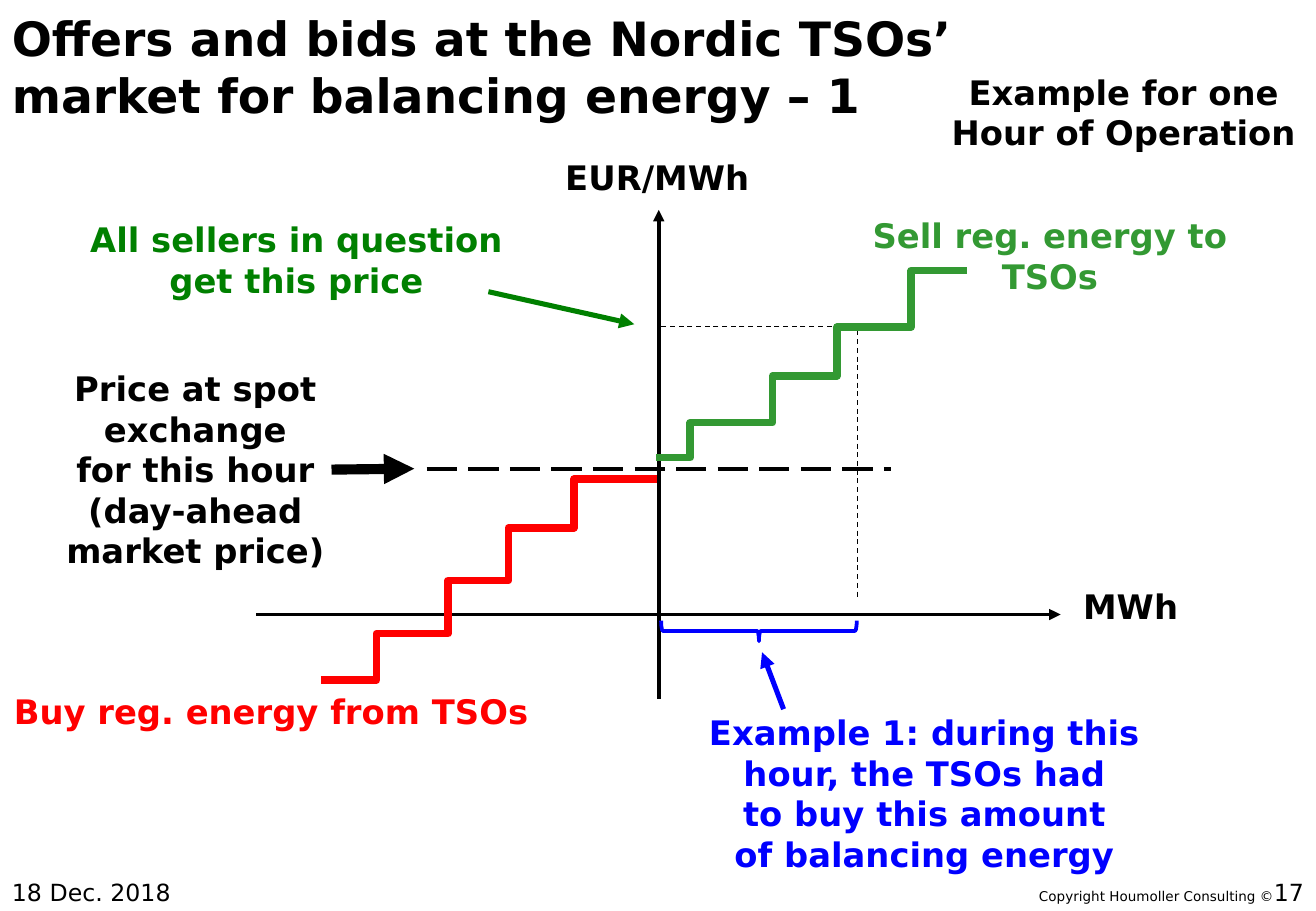
from dataclasses import dataclass

from lxml.etree import SubElement
from pptx import Presentation
from pptx.dml.color import RGBColor
from pptx.enum.dml import MSO_LINE
from pptx.enum.shapes import MSO_CONNECTOR, MSO_SHAPE
from pptx.enum.text import MSO_ANCHOR, PP_ALIGN
from pptx.oxml.ns import qn
from pptx.util import Cm, Pt


@dataclass(frozen=True)
class Theme:
    font: str = "DejaVu Sans"
    ink: str = "000000"
    price: str = "008000"
    sell: str = "339933"
    buy: str = "FF0000"
    volume: str = "0000FF"
    title: int = 28
    label: int = 20
    footer: int = 14
    copyright: int = 8
    curve: float = 4.5
    axis: float = 2.25
    pointer: float = 3
    spot: float = 6
    guide: float = 0.75


THEME = Theme()
LEFT, CENTER, RIGHT = PP_ALIGN.LEFT, PP_ALIGN.CENTER, PP_ALIGN.RIGHT
TOP, MIDDLE = MSO_ANCHOR.TOP, MSO_ANCHOR.MIDDLE

# Content; all positions in centimetres
SLIDE = (27.51, 19.05)
MWH_AXIS_Y, EUR_AXIS_X, SPOT_PRICE_Y = 12.85, 13.77, 9.8

# Diagram labels: text, colour, (left, top, width, height)
LABELS = [
    ("All sellers in question\nget this price", THEME.price, (1.63, 4.45, 9.14, 1.96)),
    ("Sell reg. energy to TSOs", THEME.sell, (17.4, 4.37, 9.1, 1.96)),
    ("Price at spot\nexchange\nfor this hour\n(day-ahead\nmarket price)",
     THEME.ink, (1.09, 7.57, 5.99, 4.52)),
    ("Example 1: during this\nhour, the TSOs had\nto buy this amount\nof balancing energy",
     THEME.volume, (14.55, 14.76, 9.55, 3.68)),
    ("MWh", THEME.ink, (22.38, 12.12, 2.51, 1.12)),
    ("EUR/MWh", THEME.ink, (11.43, 3.15, 4.62, 1.12)),
    ("Buy reg. energy from TSOs", THEME.buy, (0.03, 14.33, 11.28, 1.12)),
    ("Example for one\nHour of Operation", THEME.ink, (19.63, 1.37, 7.72, 1.96)),
]
# Title and footer: text, size, bold, alignment, anchor, box
FRAME_TEXTS = [
    ("Offers and bids at the Nordic TSOs’\nmarket for balancing energy – 1",
     THEME.title, True, LEFT, MIDDLE, (0.25, -0.2, 23, 3.18)),
    ("18 Dec. 2018", THEME.footer, False, LEFT, MIDDLE, (0.25, 18.01, 5.5, 1.27)),
    ("Copyright Houmoller Consulting ©",
     THEME.copyright, False, LEFT, TOP, (21.72, 18.44, 5.2, 0.61)),
    ("17", THEME.footer, False, RIGHT, MIDDLE, (21.79, 18.01, 5.47, 1.27)),
]
# Guides, axes and pointers: start, end, colour, width, dash, arrowhead at end
LINES = [
    ((18.11, 6.83), (EUR_AXIS_X, 6.83), THEME.ink, THEME.guide, MSO_LINE.DASH, False),
    ((17.92, 6.91), (17.92, 12.52), THEME.ink, THEME.guide, MSO_LINE.DASH, False),
    ((10.21, 6.1), (13.26, 6.78), THEME.price, THEME.pointer, None, True),
    ((6.93, 9.82), (8.66, SPOT_PRICE_Y), THEME.ink, THEME.spot, None, True),
    ((8.92, SPOT_PRICE_Y), (18.62, SPOT_PRICE_Y),
     THEME.ink, THEME.axis, MSO_LINE.LONG_DASH, False),
    ((16.38, 14.83), (15.93, 13.64), THEME.volume, THEME.pointer, None, True),
    ((5.36, MWH_AXIS_Y), (22.17, MWH_AXIS_Y), THEME.ink, THEME.axis, None, True),
    ((EUR_AXIS_X, 14.61), (EUR_AXIS_X, 4.39), THEME.ink, THEME.axis, None, True),
]
# Step curves: colour, step edges (x), price levels (y)
CURVES = [
    (THEME.sell, [13.72, 14.43, 16.15, 17.5, 19.05, 20.22], [9.57, 8.84, 7.86, 6.84, 5.66]),
    (THEME.buy, [6.71, 7.87, 9.37, 10.63, 12, 13.74], [14.22, 13.25, 12.14, 11.04, 10.02]),
]
BOUGHT_VOLUME = (15.65, 11.15, 0.43, 4.09)

presentation = Presentation()
presentation.slide_width, presentation.slide_height = map(Cm, SLIDE)
slide = presentation.slides.add_slide(presentation.slide_layouts[6])
shapes = slide.shapes


def add_text(text, size, color, bold, align, anchor, box):
    frame = shapes.add_textbox(*map(Cm, box)).text_frame
    frame.word_wrap = True
    frame.vertical_anchor = anchor
    frame.margin_left = frame.margin_right = 0
    frame.text = text
    for paragraph in frame.paragraphs:
        paragraph.alignment = align
        for run in paragraph.runs:
            run.font.name = THEME.font
            run.font.size = Pt(size)
            run.font.bold = bold
            run.font.color.rgb = RGBColor.from_string(color)


def style_line(line, color, width):
    line.color.rgb = RGBColor.from_string(color)
    line.width = Pt(width)


def add_line(start, end, color, width, dash, arrow):
    connector = shapes.add_connector(MSO_CONNECTOR.STRAIGHT, *map(Cm, start + end))
    style_line(connector.line, color, width)
    if dash:
        connector.line.dash_style = dash
    properties = connector.element.spPr
    if arrow:
        SubElement(properties.find(qn("a:ln")), qn("a:tailEnd"), type="triangle")
    SubElement(properties, qn("a:effectLst"))


def add_curve(color, edges, levels):
    corners = [
        (Cm(x), Cm(level))
        for left, right, level in zip(edges, edges[1:], levels)
        for x in (left, right)
    ]
    builder = shapes.build_freeform(*corners[0], scale=1.0)
    builder.add_line_segments(corners[1:], close=False)
    curve = builder.convert_to_shape()
    curve.shadow.inherit = False
    curve.fill.background()
    style_line(curve.line, color, THEME.curve)
    SubElement(curve.element.spPr.find(qn("a:ln")), qn("a:round"))


# Lines and step curves
for line_row in LINES:
    add_line(*line_row)
for curve_row in CURVES:
    add_curve(*curve_row)

# Brace under the bought volume
brace = shapes.add_shape(MSO_SHAPE.RIGHT_BRACE, *map(Cm, BOUGHT_VOLUME))
brace.rotation = 90
brace.shadow.inherit = False
brace.fill.background()
style_line(brace.line, THEME.volume, THEME.axis)

# Texts
for label, color, box in LABELS:
    add_text(label, THEME.label, color, True, CENTER, TOP, box)
for text, size, bold, align, anchor, box in FRAME_TEXTS:
    add_text(text, size, THEME.ink, bold, align, anchor, box)

presentation.save("out.pptx")
